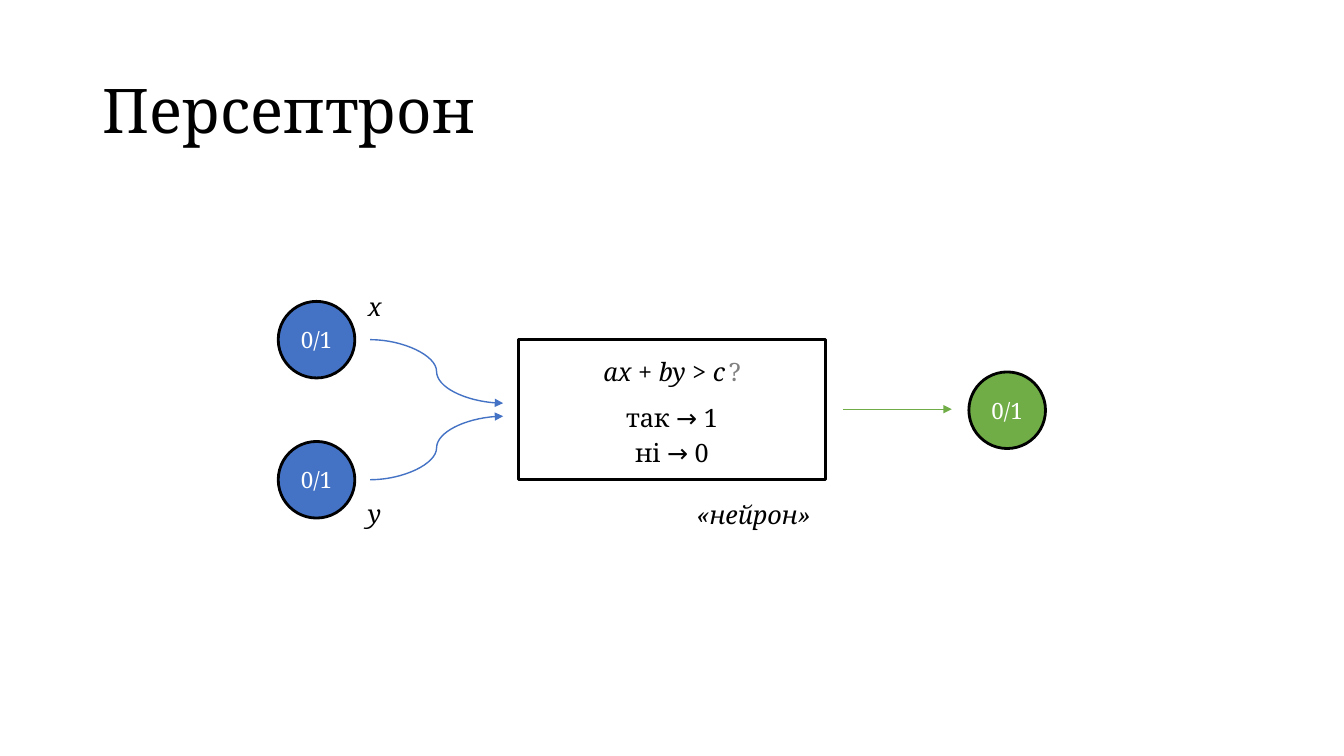
"""Build a slide that shows a perceptron with two binary inputs and one output."""
from dataclasses import dataclass

from lxml.etree import SubElement
from pptx import Presentation
from pptx.dml.color import RGBColor
from pptx.enum.shapes import MSO_CONNECTOR, MSO_SHAPE
from pptx.enum.text import MSO_ANCHOR, MSO_AUTO_SIZE, PP_ALIGN
from pptx.oxml.ns import qn
from pptx.util import Inches, Pt


@dataclass(frozen=True)
class Theme:
    font: str = "Noto Serif"
    black: str = "000000"
    white: str = "FFFFFF"
    gray: str = "808080"
    blue: str = "4472C4"
    green: str = "70AD47"
    title: int = 44
    body: int = 18
    node: int = 16
    gap: int = 10
    outline: int = 2
    arrow: int = 1


@dataclass(frozen=True)
class Node:
    left: float
    top: float
    color: str


@dataclass(frozen=True)
class Arrow:
    kind: MSO_CONNECTOR
    start: tuple[float, float]
    end: tuple[float, float]
    color: str


@dataclass(frozen=True)
class Label:
    text: str
    left: float
    top: float
    width: float
    align: PP_ALIGN = PP_ALIGN.LEFT
    wrap: bool = False


THEME = Theme()
NODE_SIZE = 0.76
NODES = [
    Node(2.76, 2.99, THEME.blue),
    Node(2.76, 4.38, THEME.blue),
    Node(9.61, 3.69, THEME.green),
]
ARROWS = [
    Arrow(MSO_CONNECTOR.CURVE, (3.67, 3.37), (4.99, 4), THEME.blue),
    Arrow(MSO_CONNECTOR.CURVE, (3.67, 4.76), (4.99, 4.13), THEME.blue),
    Arrow(MSO_CONNECTOR.STRAIGHT, (8.36, 4.06), (9.44, 4.06), THEME.green),
]
LABELS = [
    Label("x", 3.55, 2.84, 0.35),
    Label("y", 3.55, 4.89, 0.35),
    Label("«нейрон»", 6.19, 4.9, 2.57, PP_ALIGN.CENTER, True),
]


def rgb(color: str) -> RGBColor:
    return RGBColor.from_string(color)


def write(p, text: str, *, size: int = THEME.body, color: str = THEME.black,
          italic: bool = False) -> None:
    for i, line in enumerate(text.split("\n")):
        if i:
            p.add_line_break()
        r = p.add_run()
        r.text = line
        r.font.name = THEME.font
        r.font.size = Pt(size)
        r.font.italic = italic
        r.font.color.rgb = rgb(color)


def add_outlined(slide, kind: MSO_SHAPE, left: float, top: float,
                 width: float, height: float, fill: str | None = None):
    sp = slide.shapes.add_shape(
        kind, Inches(left), Inches(top), Inches(width), Inches(height))
    sp.shadow.inherit = False
    if fill:
        sp.fill.solid()
        sp.fill.fore_color.rgb = rgb(fill)
    else:
        sp.fill.background()
    sp.line.color.rgb = rgb(THEME.black)
    sp.line.width = Pt(THEME.outline)
    tf = sp.text_frame
    tf.vertical_anchor = MSO_ANCHOR.MIDDLE
    tf.paragraphs[0].alignment = PP_ALIGN.CENTER
    return sp


def add_node(slide, node: Node) -> None:
    sp = add_outlined(slide, MSO_SHAPE.OVAL, node.left, node.top,
                      NODE_SIZE, NODE_SIZE, node.color)
    tf = sp.text_frame
    tf.margin_left = tf.margin_right = 0
    write(tf.paragraphs[0], "0/1", size=THEME.node, color=THEME.white)


def add_neuron(slide) -> None:
    tf = add_outlined(slide, MSO_SHAPE.RECTANGLE, 5.14, 3.37, 3.05, 1.39).text_frame
    rule = tf.paragraphs[0]
    rule.line_spacing = 1.14
    for text, italic in [("ax", True), (" + ", False), ("by", True),
                         (" > ", False), ("с", True)]:
        write(rule, text, italic=italic)
    write(rule, " ", size=THEME.gap)
    write(rule, "?", color=THEME.gray)
    answers = tf.add_paragraph()
    answers.alignment = PP_ALIGN.CENTER
    answers.line_spacing = 1.14
    answers.space_before = Pt(8)
    write(answers, "так → 1\nні → 0")


def add_arrow(slide, arrow: Arrow) -> None:
    ends = [Inches(v) for v in (*arrow.start, *arrow.end)]
    cxn = slide.shapes.add_connector(arrow.kind, *ends)
    cxn.line.color.rgb = rgb(arrow.color)
    cxn.line.width = Pt(THEME.arrow)
    SubElement(cxn.line._get_or_add_ln(), qn("a:tailEnd"), type="triangle")
    SubElement(cxn._element.spPr, qn("a:effectLst"))


def add_label(slide, label: Label) -> None:
    tf = slide.shapes.add_textbox(Inches(label.left), Inches(label.top),
                                  Inches(label.width), Inches(0.4)).text_frame
    tf.word_wrap = label.wrap
    tf.auto_size = MSO_AUTO_SIZE.SHAPE_TO_FIT_TEXT
    p = tf.paragraphs[0]
    p.alignment = label.align
    write(p, label.text, italic=True)


def add_title(slide, text: str) -> None:
    sp = slide.shapes.title
    sp.left, sp.top = Inches(0.92), Inches(0.4)
    sp.width, sp.height = Inches(11.5), Inches(1.45)
    tf = sp.text_frame
    tf.auto_size = MSO_AUTO_SIZE.NONE
    tf.vertical_anchor = MSO_ANCHOR.MIDDLE
    p = tf.paragraphs[0]
    p.alignment = PP_ALIGN.LEFT
    p.line_spacing = 0.9
    write(p, text, size=THEME.title)


def main() -> None:
    prs = Presentation()
    prs.slide_width, prs.slide_height = Inches(13.33), Inches(7.5)
    slide = prs.slides.add_slide(prs.slide_layouts.get_by_name("Title Only"))
    add_title(slide, "Персептрон")
    for node in NODES:
        add_node(slide, node)
    add_neuron(slide)
    for arrow in ARROWS:
        add_arrow(slide, arrow)
    for label in LABELS:
        add_label(slide, label)
    prs.save("out.pptx")


if __name__ == "__main__":
    main()
